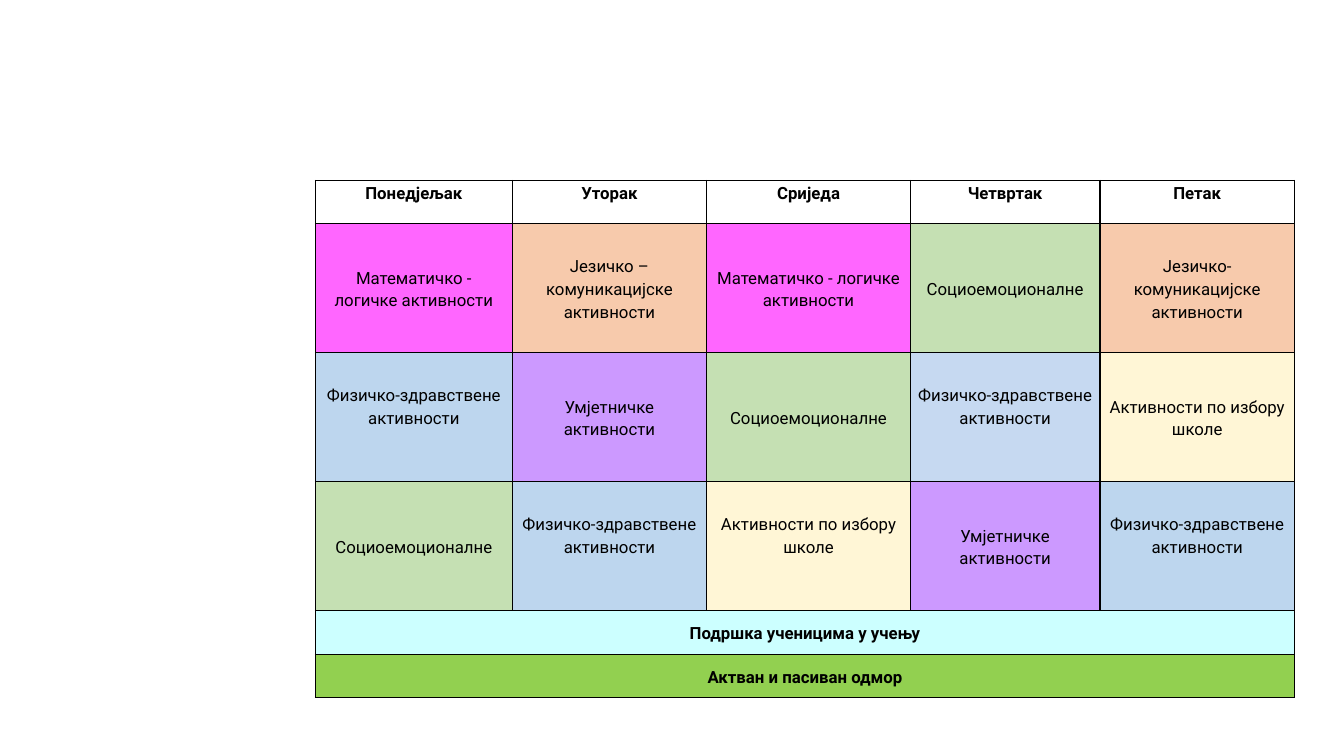
from lxml import etree
from pptx import Presentation
from pptx.dml.color import RGBColor
from pptx.enum.text import MSO_ANCHOR, PP_ALIGN
from pptx.oxml.ns import qn
from pptx.util import Inches, Pt

CENTER = PP_ALIGN.CENTER
TOP, MIDDLE = MSO_ANCHOR.TOP, MSO_ANCHOR.MIDDLE

BLACK = RGBColor(0x00, 0x00, 0x00)
PINK = RGBColor(0xFF, 0x66, 0xFF)
PEACH = RGBColor(0xF7, 0xCA, 0xAC)
GREEN = RGBColor(0xC5, 0xE0, 0xB3)
BLUE = RGBColor(0xBD, 0xD6, 0xEE)
PALE_BLUE = RGBColor(0xC6, 0xD9, 0xF1)
PURPLE = RGBColor(0xCC, 0x99, 0xFF)
CREAM = RGBColor(0xFF, 0xF6, 0xD6)
CYAN = RGBColor(0xCC, 0xFF, 0xFF)
LIME = RGBColor(0x92, 0xD0, 0x50)

DAYS = ["Понедјељак", "Уторак", "Сриједа", "Четвртак", "Петак"]
MATH = ("Математичко - логичке активности", PINK)
SOCIAL = ("Социоемоционалне", GREEN)
ART = ("Умјетничке активности", PURPLE)
# The third value lifts the text above the middle of its cell, in inches
PHYSICAL = ("Физичко-здравствене активности", BLUE, 0.23)
CHOICE = ("Активности по избору школе", CREAM)
ACTIVITIES = [
    [MATH, ("Језичко – комуникацијске активности", PEACH), MATH, SOCIAL,
     ("Језичко- комуникацијскe активности", PEACH)],
    [PHYSICAL, ART, SOCIAL, (PHYSICAL[0], PALE_BLUE, 0.23), CHOICE],
    [SOCIAL, PHYSICAL, (*CHOICE, 0.23), ART, PHYSICAL],
]
DAILY = [("Подршка ученицима у учењу", CYAN), ("Актван и пасиван одмор", LIME)]

COL_WIDTHS = [1.95, 1.93, 2.02, 1.88, 1.93]
ROW_HEIGHTS = [0.43, 1.28, 1.28, 1.28, 0.43, 0.43]


class SlideBuilder:
    font, size, spacing = "Roboto", Pt(12), 1.15
    border_width, border_color = Pt(1), BLACK

    def __init__(self, prs):
        self.slide = prs.slides.add_slide(prs.slide_layouts[6])

    def table(self, left, top, widths, heights):
        frame = self.slide.shapes.add_table(
            len(heights), len(widths), Inches(left), Inches(top),
            Inches(sum(widths)), Inches(sum(heights)))
        table = frame.table
        table.first_row = table.horz_banding = False
        for column, width in zip(table.columns, widths):
            column.width = Inches(width)
        for row, height in zip(table.rows, heights):
            row.height = Inches(height)
        for cell in table.iter_cells():
            self.borders(cell)
            cell.fill.background()
        return table

    def borders(self, cell):
        tc_pr = cell._tc.get_or_add_tcPr()
        for side in "LRTB":
            ln = etree.SubElement(tc_pr, qn(f"a:ln{side}"), w=str(self.border_width))
            fill = etree.SubElement(ln, qn("a:solidFill"))
            etree.SubElement(fill, qn("a:srgbClr"), val=str(self.border_color))

    def cell(self, cell, text, color=None, lift=0, bold=False, anchor=MIDDLE):
        cell.margin_left = cell.margin_right = Inches(0.07)
        cell.margin_top, cell.margin_bottom = 0, Inches(lift)
        cell.vertical_anchor = anchor
        if color is not None:
            cell.fill.solid()
            cell.fill.fore_color.rgb = color
        p = cell.text_frame.paragraphs[0]
        p.alignment, p.line_spacing = CENTER, self.spacing
        r = p.add_run()
        r.text = text
        r.font.name, r.font.size, r.font.bold = self.font, self.size, bold
        r.font.color.rgb = BLACK


def main():
    prs = Presentation()
    prs.slide_width, prs.slide_height = Inches(13.33), Inches(7.5)
    builder = SlideBuilder(prs)
    table = builder.table(3.13, 1.79, COL_WIDTHS, ROW_HEIGHTS)

    for col, day in enumerate(DAYS):
        builder.cell(table.cell(0, col), day, bold=True, anchor=TOP)
    for row, activities in enumerate(ACTIVITIES, start=1):
        for col, activity in enumerate(activities):
            builder.cell(table.cell(row, col), *activity)
    for row, (text, color) in enumerate(DAILY, start=1 + len(ACTIVITIES)):
        first = table.cell(row, 0)
        first.merge(table.cell(row, len(DAYS) - 1))
        builder.cell(first, text, color, bold=True)

    prs.save("out.pptx")


if __name__ == "__main__":
    main()
